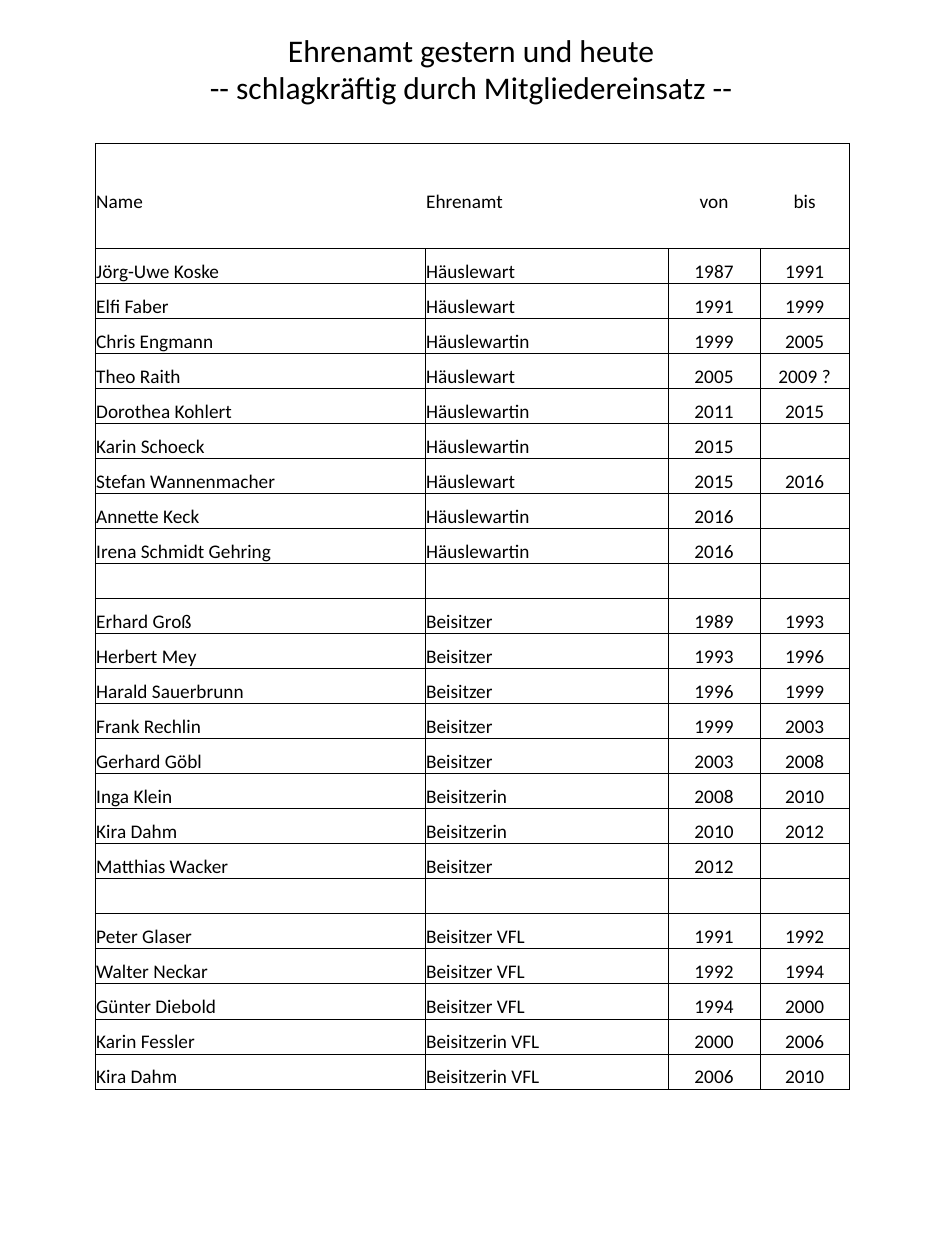
"""Build a one-page table of club volunteers and their terms of office."""
from typing import NamedTuple

from lxml import etree
from pptx import Presentation, util as u
from pptx.dml import color
from pptx.enum import text
from pptx.oxml import ns

HUES = {"ink": "000000"}
FACE = "Calibri"
WIDTHS = (6.65, 4.9, 1.85, 1.8)
HEIGHT = 19.08
HEAD = 3


class Term(NamedTuple):
    name: str = ""
    post: str = ""
    start: str = ""
    end: str = ""


GROUPS = (
    (
        Term("Jörg-Uwe Koske", "Häuslewart", "1987", "1991"),
        Term("Elfi Faber", "Häuslewart", "1991", "1999"),
        Term("Chris Engmann", "Häuslewartin", "1999", "2005"),
        Term("Theo Raith", "Häuslewart", "2005", "2009 ?"),
        Term("Dorothea Kohlert", "Häuslewartin", "2011", "2015"),
        Term("Karin Schoeck", "Häuslewartin", "2015"),
        Term("Stefan Wannenmacher", "Häuslewart", "2015", "2016"),
        Term("Annette Keck", "Häuslewartin", "2016"),
        Term("Irena Schmidt Gehring", "Häuslewartin", "2016"),
    ),
    (
        Term("Erhard Groß", "Beisitzer", "1989", "1993"),
        Term("Herbert Mey", "Beisitzer", "1993", "1996"),
        Term("Harald Sauerbrunn", "Beisitzer", "1996", "1999"),
        Term("Frank Rechlin", "Beisitzer", "1999", "2003"),
        Term("Gerhard Göbl", "Beisitzer", "2003", "2008"),
        Term("Inga Klein", "Beisitzerin", "2008", "2010"),
        Term("Kira Dahm", "Beisitzerin", "2010", "2012"),
        Term("Matthias Wacker", "Beisitzer", "2012"),
    ),
    (
        Term("Peter Glaser", "Beisitzer VFL", "1991", "1992"),
        Term("Walter Neckar", "Beisitzer VFL", "1992", "1994"),
        Term("Günter Diebold", "Beisitzer VFL", "1994", "2000"),
        Term("Karin Fessler", "Beisitzerin VFL", "2000", "2006"),
        Term("Kira Dahm", "Beisitzerin VFL", "2006", "2010"),
    ),
)


def style(para, size: int, align) -> None:
    para.alignment = align
    for run in para.runs:
        run.font.size = u.Pt(size)
        run.font.name = FACE
        run.font.color.rgb = color.RGBColor.from_string(HUES["ink"])


def edge(cell, side: str, shown: bool) -> None:
    line = etree.SubElement(cell._tc.get_or_add_tcPr(), ns.qn(f"a:ln{side}"), w=str(u.Pt(0.5)))
    if shown:
        fill = etree.SubElement(line, ns.qn("a:solidFill"))
        etree.SubElement(fill, ns.qn("a:srgbClr"), val=HUES["ink"])
    else:
        etree.SubElement(line, ns.qn("a:noFill"))


def fill_cell(cell, row: int, col: int, label: str) -> None:
    cell.margin_left = cell.margin_right = cell.margin_top = u.Cm(0.02)
    cell.margin_bottom = 0
    cell.vertical_anchor = text.MSO_ANCHOR.BOTTOM
    body = row >= HEAD
    shown = {
        "L": body or col == 0,
        "R": body or col == len(WIDTHS) - 1,
        "T": body or row == 0,
        "B": body or row == HEAD - 1,
    }
    for side, flag in shown.items():
        edge(cell, side, flag)
    cell.fill.background()
    cell.text_frame.text = label
    para = cell.text_frame.paragraphs[0]
    style(para, 11, text.PP_ALIGN.CENTER if col > 1 else text.PP_ALIGN.LEFT)
    if not label:
        etree.SubElement(para._p, ns.qn("a:endParaRPr"), sz="1100")


def add_title(slide) -> None:
    title = slide.shapes.title
    title.left, title.top, title.width, title.height = map(u.Cm, (3.8, 0.48, 11.4, 1.8))
    frame = title.text_frame
    frame.text = "Ehrenamt gestern und heute\n-- schlagkräftig durch Mitgliedereinsatz --"
    frame.word_wrap = False
    frame.auto_size = text.MSO_AUTO_SIZE.SHAPE_TO_FIT_TEXT
    frame.vertical_anchor = text.MSO_ANCHOR.MIDDLE
    for para in frame.paragraphs:
        style(para, 18, text.PP_ALIGN.CENTER)


def add_terms(slide) -> None:
    rows = [Term(), Term("Name", "Ehrenamt", "von", "bis"), Term()]
    for index, group in enumerate(GROUPS):
        rows += [Term()] * (index > 0) + list(group)
    spot = map(u.Cm, (1.92, 2.89, sum(WIDTHS), HEIGHT))
    table = slide.shapes.add_table(len(rows), len(WIDTHS), *spot).table
    table.first_row = table.horz_banding = False
    for column, width in zip(table.columns, WIDTHS):
        column.width = u.Cm(width)
    for r, term in enumerate(rows):
        table.rows[r].height = u.Cm(HEIGHT / len(rows))
        for c, label in enumerate(term):
            fill_cell(table.cell(r, c), r, c, label)


def main() -> None:
    deck = Presentation()
    deck.slide_width, deck.slide_height = u.Cm(19.05), u.Cm(25.4)
    slide = deck.slides.add_slide(deck.slide_layouts[5])
    add_title(slide)
    add_terms(slide)
    deck.save("out.pptx")


if __name__ == "__main__":
    main()
